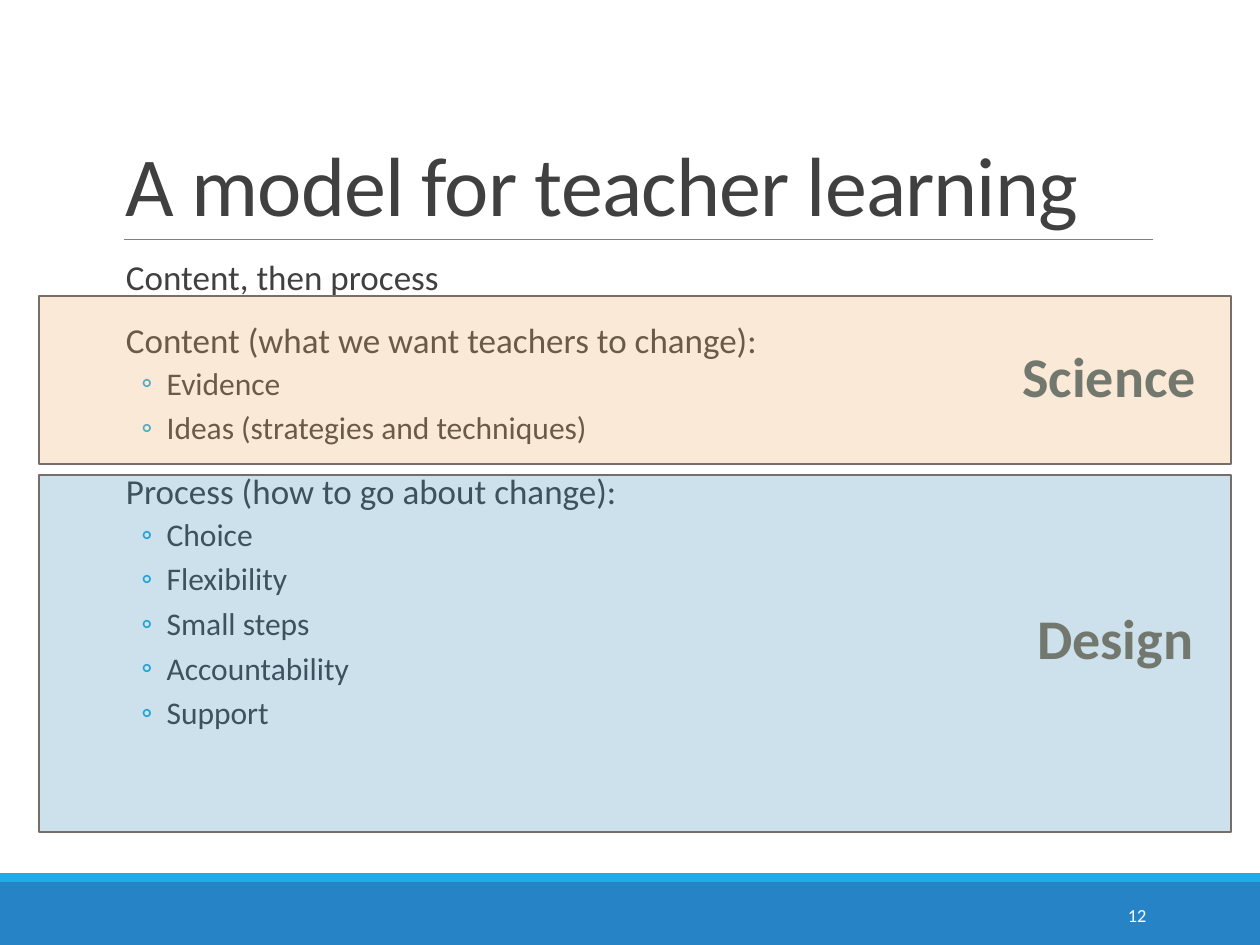
from dataclasses import dataclass

from lxml import etree
from pptx import Presentation
from pptx.dml.color import RGBColor
from pptx.enum.shapes import MSO_CONNECTOR, MSO_SHAPE
from pptx.enum.text import MSO_ANCHOR, PP_ALIGN
from pptx.oxml.ns import qn
from pptx.util import Cm, Pt

RECT = MSO_SHAPE.RECTANGLE
LINE = MSO_CONNECTOR.STRAIGHT
TOP, MID, BASE = MSO_ANCHOR.TOP, MSO_ANCHOR.MIDDLE, MSO_ANCHOR.BOTTOM
LEFT, RIGHT = PP_ALIGN.LEFT, PP_ALIGN.RIGHT

FONT = "Calibri"
DARK = RGBColor(0x40, 0x40, 0x40)
WHITE = RGBColor(0xFF, 0xFF, 0xFF)
BLUE = RGBColor(0x26, 0x83, 0xC6)
CYAN = RGBColor(0x1C, 0xAD, 0xE4)
GREY = RGBColor(0x80, 0x80, 0x80)
EDGE = RGBColor(0x78, 0x6E, 0x69)
SAGE = RGBColor(0x73, 0x78, 0x6E)
PEACH = RGBColor(0xED, 0xAA, 0x61)
STEEL = RGBColor(0x34, 0x88, 0xB6)


@dataclass
class Box:
    x: float
    y: float
    w: float
    h: float

    def cm(self) -> list:
        return [Cm(v) for v in (self.x, self.y, self.w, self.h)]


@dataclass
class Band:
    name: str
    box: Box
    fill: RGBColor
    label: Box


@dataclass
class Topic:
    head: str
    items: tuple = ()


BANDS = (
    Band("Science", Box(0.79, 5.97, 24.03, 3.38), PEACH, Box(19.61, 6.76, 4.75, 1.6)),
    Band("Design", Box(0.79, 9.58, 24.03, 7.19), STEEL, Box(19.89, 12.04, 4.42, 2.51)),
)
TOPICS = (
    Topic("Content, then process"),
    Topic("Content (what we want teachers to change):",
          ("Evidence", "Ideas (strategies and techniques)")),
    Topic("Process (how to go about change):",
          ("Choice", "Flexibility", "Small steps", "Accountability", "Support")),
)


def frame(shapes, box: Box, anchor=TOP, side: float = 0.25):
    body = shapes.add_textbox(*box.cm()).text_frame
    body.word_wrap = True
    body.vertical_anchor = anchor
    body.margin_left = body.margin_right = Cm(side)
    return body


def write(body, text: str, *, size: float, color=DARK, bold=False, align=LEFT,
          lead=1.0, above=0, below=0, margin=0.0, hang=0.0, track=0, mark="") -> None:
    para = body.paragraphs[0]
    if para.runs:
        para = body.add_paragraph()
    para.alignment = align
    para.line_spacing = lead
    para.space_before, para.space_after = Pt(above), Pt(below)
    run = para.add_run()
    run.text = text
    font = run.font
    font.name, font.size, font.bold = FONT, Pt(size), bold
    font.color.rgb = color
    if track:
        run._r.get_or_add_rPr().set("spc", str(track))
    props = para._p.get_or_add_pPr()
    props.set("marL", str(Cm(margin)))
    props.set("indent", str(-Cm(hang)))
    if mark:
        tint = etree.SubElement(props, qn("a:buClr"))
        etree.SubElement(tint, qn("a:srgbClr")).set("val", str(CYAN))
        etree.SubElement(props, qn("a:buFont")).set("typeface", FONT)
        etree.SubElement(props, qn("a:buChar")).set("char", mark)


def block(shapes, box: Box, fill: RGBColor):
    shape = shapes.add_shape(RECT, *box.cm())
    shape.shadow.inherit = False
    shape.fill.solid()
    shape.fill.fore_color.rgb = fill
    shape.line.fill.background()
    return shape


def rule(shapes, left: float, right: float, y: float) -> None:
    line = shapes.add_connector(LINE, Cm(left), Cm(y), Cm(right), Cm(y))
    line.line.color.rgb = GREY
    line.line.width = Pt(0.5)
    etree.SubElement(line._element.spPr, qn("a:effectLst"))


def draw(shapes, band: Band) -> None:
    group = shapes.add_group_shape().shapes
    shape = block(group, band.box, band.fill)
    shape.line.color.rgb = EDGE
    shape.line.width = Pt(1)
    tint = shape._element.spPr.find(qn("a:solidFill"))[0]
    etree.SubElement(tint, qn("a:alpha")).set("val", "25000")
    write(frame(group, band.label), band.name, size=32, color=SAGE,
          bold=True, align=RIGHT)


def main() -> None:
    deck = Presentation()
    deck.slide_width, deck.slide_height = Cm(25.4), Cm(19.05)
    shapes = deck.slides.add_slide(deck.slide_layouts[6]).shapes

    block(shapes, Box(0, 17.78, 25.4, 1.27), BLUE)
    block(shapes, Box(0, 17.6, 25.4, 0.18), CYAN)
    rule(shapes, 2.49, 23.24, 4.83)

    write(frame(shapes, Box(2.29, 0.79, 20.95, 4.04), BASE),
          "A model for teacher learning", size=48, lead=0.85, track=-50)

    body = frame(shapes, Box(2.29, 5.13, 20.95, 11.18), side=0)
    for topic in TOPICS:
        write(body, topic.head, size=20, lead=0.9, above=12, below=2, margin=0.25)
        for item in topic.items:
            write(body, item, size=18, lead=0.9, above=2, below=4,
                  margin=1.07, hang=0.51, mark="◦")

    write(frame(shapes, Box(20.62, 17.93, 2.74, 1.02), MID), "12",
          size=10.5, color=WHITE, align=RIGHT)
    for band in BANDS:
        draw(shapes, band)
    deck.save("out.pptx")


if __name__ == "__main__":
    main()
